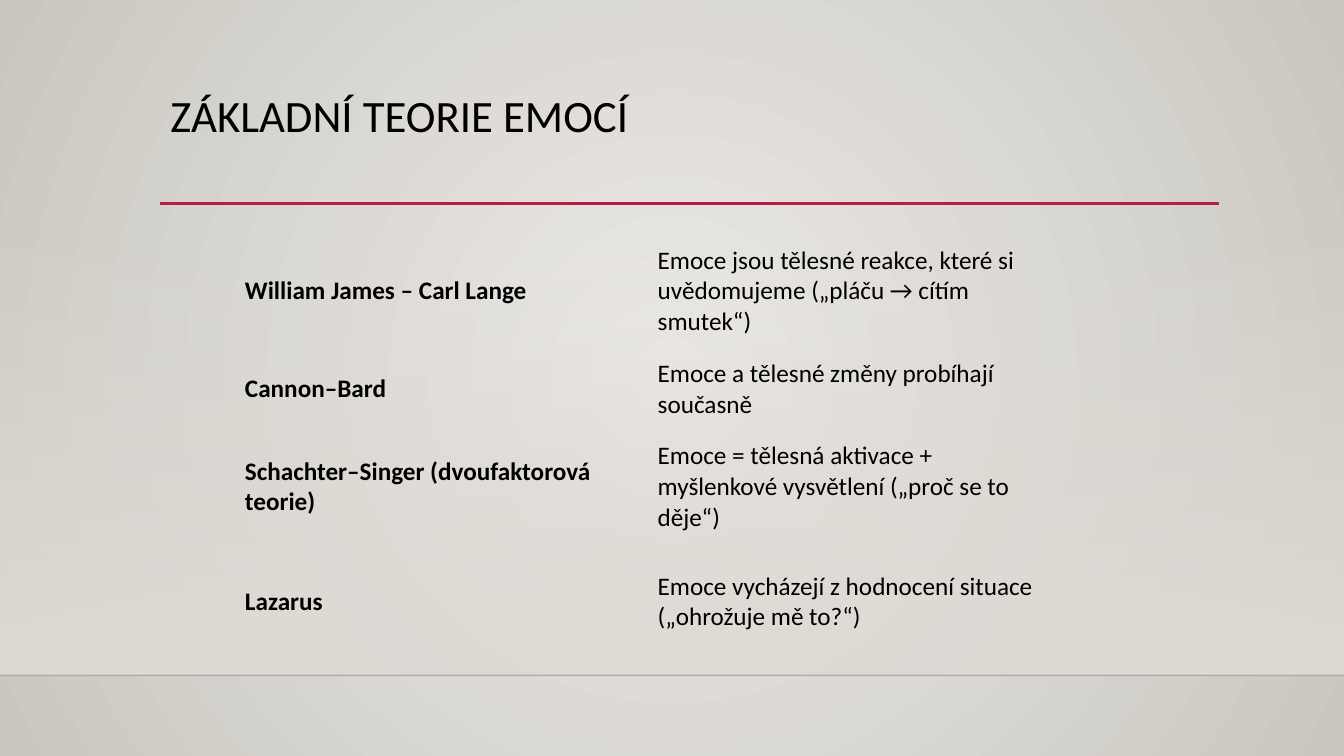
from lxml import etree
from pptx import Presentation
from pptx.dml.color import RGBColor
from pptx.enum.shapes import MSO_CONNECTOR, MSO_SHAPE
from pptx.enum.text import MSO_ANCHOR, MSO_AUTO_SIZE, PP_ALIGN
from pptx.oxml import parse_xml
from pptx.oxml.ns import nsdecls, qn
from pptx.util import Cm, Pt

STRAIGHT = MSO_CONNECTOR.STRAIGHT
RECTANGLE = MSO_SHAPE.RECTANGLE
TOP, MIDDLE = MSO_ANCHOR.TOP, MSO_ANCHOR.MIDDLE
LEFT = PP_ALIGN.LEFT
NO_AUTOFIT = MSO_AUTO_SIZE.NONE

TITLE = "ZÁKLADNÍ TEORIE EMOCÍ"
THEORIES = [
    ("William James – Carl Lange",
     "Emoce jsou tělesné reakce, které si uvědomujeme („pláču → cítím smutek“)"),
    ("Cannon–Bard", "Emoce a tělesné změny probíhají současně"),
    ("Schachter–Singer (dvoufaktorová teorie)",
     "Emoce = tělesná aktivace + myšlenkové vysvětlení („proč se to děje“)"),
    ("Lazarus", "Emoce vycházejí z hodnocení situace („ohrožuje mě to?“)"),
]
ROWS = [("", "")] + THEORIES
ROW_HEIGHTS = [1.17, 2.9, 2.03, 2.9, 2.9]
COLUMN_WIDTH = 10.4

FONT = "Calibri"
BLACK, NEAR_BLACK, RED = "000000", "000001", "B71E42"
SAND, LIGHT, DARK = "DFDBD5", "ECEAE7", "CAC7C1"
NO_GRID_STYLE = "{2D5ABB26-0587-4C30-8999-92F81FD0307C}"

WIDTH, HEIGHT = 33.87, 19.05
FLOOR = 17.02
WALL_TOP = 5.61
MARGIN = 4.04


def color(value):
    return RGBColor.from_string(value)


def set_alpha(color_element, percent):
    alpha = etree.SubElement(color_element, qn("a:alpha"))
    alpha.set("val", str(percent * 1000))


def add_run(para, text, size, bold=False):
    span = para.add_run()
    span.text = text
    span.font.name = FONT
    span.font.size = Pt(size)
    span.font.bold = bold
    span.font.color.rgb = color(BLACK)


def add_rule(page, left, right, top, line_color, weight):
    rule = page.shapes.add_connector(STRAIGHT, Cm(left), Cm(top), Cm(right), Cm(top))
    rule.line.color.rgb = color(line_color)
    rule.line.width = Pt(weight)
    etree.SubElement(rule._element.spPr, qn("a:effectLst"))
    return rule


def paint_background(page):
    """Radial gradient, light in the centre."""
    fill = page.background.fill
    fill.gradient()
    for stop, value in zip(fill.gradient_stops, (LIGHT, DARK)):
        stop.color.rgb = color(value)
    fill.gradient_stops[0].position = 0
    fill.gradient_stops[1].position = 1
    gradient = next(page._element.iter(qn("a:gradFill")))
    linear = gradient.find(qn("a:lin"))
    gradient.replace(linear, parse_xml(
        f'<a:path {nsdecls("a")} path="circle">'
        '<a:fillToRect l="50000" t="50000" r="50000" b="50000"/></a:path>'))


def add_wall(page):
    """Band that fades in from transparent down to the floor line."""
    wall = page.shapes.add_shape(RECTANGLE, 0, Cm(WALL_TOP), Cm(WIDTH), Cm(FLOOR - WALL_TOP))
    wall.shadow.inherit = False
    wall.line.fill.background()
    wall.fill.gradient()
    wall.fill.gradient_angle = 270
    for position, stop in enumerate(wall.fill.gradient_stops):
        stop.color.rgb = color(SAND)
        stop.position = position
    first_color = next(wall._element.spPr.iter(qn("a:srgbClr")))
    set_alpha(first_color, 0)


def fill_title(page):
    title = page.shapes.title
    title.left, title.top = Cm(MARGIN), Cm(2.24)
    title.width, title.height = Cm(26.67), Cm(2.92)
    frame = title.text_frame
    frame.word_wrap = True
    frame.auto_size = NO_AUTOFIT
    frame.vertical_anchor = TOP
    para = frame.paragraphs[0]
    para.alignment = LEFT
    para.line_spacing = 0.9
    add_run(para, TITLE, 32)


def add_theories(page):
    frame = page.shapes.add_table(len(ROWS), 2, Cm(5.92), Cm(4.72),
                                  Cm(2 * COLUMN_WIDTH), Cm(sum(ROW_HEIGHTS)))
    table = frame.table
    table.first_row = False
    table.horz_banding = False
    next(table._tbl.iter(qn("a:tableStyleId"))).text = NO_GRID_STYLE
    for column in table.columns:
        column.width = Cm(COLUMN_WIDTH)
    for row, height, texts in zip(table.rows, ROW_HEIGHTS, ROWS):
        row.height = Cm(height)
        for index, (cell, text) in enumerate(zip(row.cells, texts)):
            cell.fill.background()
            cell.vertical_anchor = MIDDLE
            if text:
                add_run(cell.text_frame.paragraphs[0], text, 18, bold=index == 0)


def main():
    deck = Presentation()
    deck.slide_width, deck.slide_height = Cm(WIDTH), Cm(HEIGHT)
    page = deck.slides.add_slide(deck.slide_layouts[5])
    paint_background(page)
    add_wall(page)
    floor_line = add_rule(page, 0, WIDTH, FLOOR, NEAR_BLACK, 1)
    set_alpha(next(floor_line._element.spPr.iter(qn("a:srgbClr"))), 20)
    add_rule(page, MARGIN, 30.73, 5.13, RED, 2.5)
    fill_title(page)
    add_theories(page)
    deck.save("out.pptx")


if __name__ == "__main__":
    main()
